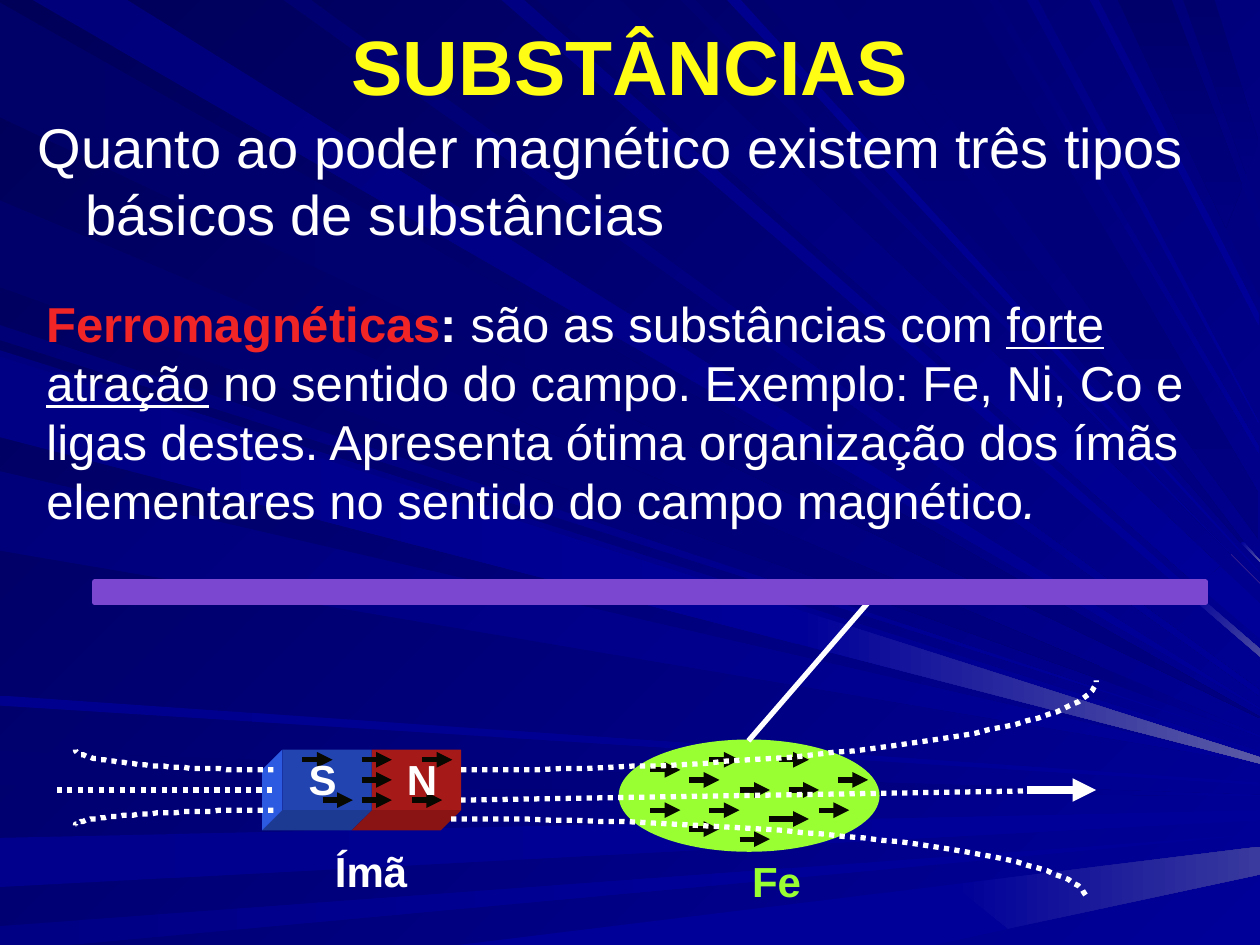
from math import cos, pi, sin

from lxml import etree
from pptx import Presentation
from pptx import util as u
from pptx.dml.color import RGBColor
from pptx.enum import dml, shapes, text
from pptx.oxml.ns import qn

WHITE = RGBColor(0xFF, 0xFF, 0xFF)
YELLOW = RGBColor(0xFF, 0xFD, 0x13)
RED = RGBColor(0xF1, 0x25, 0x25)
LIME = RGBColor(0x99, 0xFF, 0x33)
PURPLE = RGBColor(0x7B, 0x46, 0xD0)
BLACK = RGBColor(0x07, 0x08, 0x00)
BLUE_FACE = RGBColor(0x22, 0x44, 0xB0)
BLUE_SIDE = RGBColor(0x2C, 0x5A, 0xE0)
BLUE_BASE = RGBColor(0x1D, 0x3A, 0x92)
RED_FACE = RGBColor(0xA6, 0x19, 0x19)
RED_BASE = RGBColor(0x8A, 0x14, 0x14)
NIGHT = RGBColor(0x00, 0x00, 0x58)
NAVY = RGBColor(0x00, 0x00, 0x99)
UNIT = u.Cm(0.0254)  # the slide is 1000 by 750 units

# Light rays: first colour, last colour, angle, corners
RAYS = [
    ("000069", "000080", 0, "556,317 0,2 0,93 529,345 1000,570 1000,569"),
    ("00007B", "000099", 45, "577,298 101,0 26,0 563,310 1000,563 1000,562"),
    ("000071", "000080", 0, "0,623 701,629 701,621 0,596"),
    ("000080", "000099", 0, "1000,632 1000,631 701,621 701,629"),
    ("00008C", "000099", 0, "0,704 831,660 831,647 0,665"),
    ("000099", "000099", 0, "1000,651 1000,643 831,647 831,660"),
    ("000099", "000099", 0, "1000,662 628,689 628,697"),
    ("000085", "000099", 0, "0,750 54,750 628,697 628,689 0,735"),
    ("000099", "000099", 0, "742,750 801,737 756,702 364,750"),
    ("000099", "39399E", 0, "1000,694 1000,672 756,702 800,737"),
    ("000099", "000099", 0, "1000,589 873,547 873,548"),
    ("000076", "000099", 45, "0,270 873,548 873,547 0,258"),
    ("000080", "000099", 0, "1000,585 1000,584 873,529 873,539"),
    ("00006B", "000080", 0, "0,228 873,539 873,529 0,159"),
    ("000083", "000099", 45, "398,0 944,473 947,469 416,0"),
    ("000099", "4A4AA1", 45, "1000,521 1000,515 947,469 944,473"),
    ("000099", "000099", 0, "1000,507 1000,479 968,449 951,465"),
    ("00006D", "000099", 45, "426,0 951,465 968,449 492,0"),
    ("FF9999", "FF9999", 0, "1000,463 977,440 977,440"),
    ("000073", "000099", 45, "540,0 977,440 977,440 552,0"),
    ("000073", "000080", 90, "606,0 985,431 987,430 661,0"),
    ("000099", "5A5AA6", 45, "1000,446 1000,445 987,430 985,431"),
    ("000080", "000080", 0, "1000,237 1000,183 986,148 973,181"),
    ("00006B", "000080", 90, "887,0 973,181 986,148 930,0"),
    ("00006D", "000080", 90, "964,0 939,0 989,138 999,113"),
    ("000080", "000080", 0, "989,138 1000,167 1000,114 999,113"),
    ("00007E", "000099", 45, "0,342 999,602 999,596 0,278"),
    ("00007B", "000099", 45, "0,437 999,606 999,605 0,374"),
    ("00008E", "000099", 0, "0,560 999,623 999,621 0,552"),
    ("000070", "000099", 45, "225,0 999,552 999,547 247,0"),
    ("00008E", "000099", 45, "577,0 999,454 999,453 588,0"),
    ("000073", "000080", 90, "770,0 686,0 999,428 999,390 998,390"),
    ("000078", "000099", 45, "785,0 999,360 999,354 792,0"),
    ("000085", "000099", 45, "815,0 999,336 999,335 824,0"),
    ("00008A", "000099", 45, "999,249 872,0 865,0 999,258"),
    ("000085", "000099", 0, "0,283 0,347 633,511 635,498 637,485"),
    ("000099", "5A5AA6", 0, "1000,601 637,485 635,498 633,511 1000,606"),
]

prs = Presentation()
prs.slide_width, prs.slide_height = u.Cm(25.4), u.Cm(19.05)
slide = prs.slides.add_slide(prs.slide_layouts[5])
art = slide.shapes


def poly(points, close=True):
    """Draw a plain outline through points given in units."""
    pen = art.build_freeform(*points[0], scale=UNIT)
    pen.add_line_segments(points[1:], close=close)
    shape = pen.convert_to_shape()
    shape.shadow.inherit = False
    shape.line.fill.background()
    return shape


def line(ends, color, width, arrow=False):
    wire = art.add_connector(shapes.MSO_CONNECTOR.STRAIGHT, *[int(n * UNIT) for n in ends])
    wire.line.color.rgb, wire.line.width = color, u.Pt(width)
    if arrow:
        tip = etree.SubElement(wire.line._get_or_add_ln(), qn("a:tailEnd"))
        tip.set("type", "triangle")
    etree.SubElement(wire._element.spPr, qn("a:effectLst"))
    return wire


# Background
back = slide.background.fill
back.gradient()
back.gradient_angle = 315
for stop, color in zip(back.gradient_stops, (NIGHT, NAVY)):
    stop.color.rgb = color
for first, last, angle, corners in RAYS:
    ray = poly([tuple(map(int, pair.split(","))) for pair in corners.split()])
    if first == last:
        ray.fill.solid()
        ray.fill.fore_color.rgb = RGBColor.from_string(first)
        continue
    ray.fill.gradient()
    ray.fill.gradient_angle = -angle % 360
    for stop, color in zip(ray.fill.gradient_stops, (first, last)):
        stop.color.rgb = RGBColor.from_string(color)

# Title, in front of the rays
title = art.title
art._spTree.append(title._element)
title.left, title.top, title.width, title.height = [n * UNIT for n in (50, 5, 900, 93)]
title.text_frame.text = "SUBSTÂNCIAS"
title.text_frame.auto_size = text.MSO_AUTO_SIZE.NONE
title.text_frame.vertical_anchor = text.MSO_ANCHOR.MIDDLE
head = title.text_frame.paragraphs[0]
head.alignment = text.PP_ALIGN.CENTER
head.font.name, head.font.size, head.font.bold = "Arial", u.Pt(44), True
head.font.color.rgb = YELLOW

# Hanging iron and its support
for kind, box, color, width in [
    (shapes.MSO_SHAPE.OVAL, (492, 588, 205, 87), LIME, 1.5),
    (shapes.MSO_SHAPE.RECTANGLE, (75, 462, 882, 16), PURPLE, 3),
]:
    body = art.add_shape(kind, *[n * UNIT for n in box])
    body.shadow.inherit = False
    body.fill.solid()
    body.fill.fore_color.rgb = body.line.color.rgb = color
    body.line.width = u.Pt(width)
    if color == LIME:
        line((594, 588, 697, 469), WHITE, 3)

# Magnet: two front faces with slanted sides
for left, face, base in [(295, RED_FACE, RED_BASE), (224, BLUE_FACE, BLUE_BASE)]:
    front = art.add_shape(shapes.MSO_SHAPE.RECTANGLE, *[n * UNIT for n in (left, 595, 71, 48)])
    front.shadow.inherit = False
    front.line.fill.background()
    under = poly([(left, 643), (left + 71, 643), (left + 55, 659), (left - 16, 659)])
    for part, color in [(front, face), (under, base)]:
        part.fill.solid()
        part.fill.fore_color.rgb = color
side = poly([(224, 595), (224, 643), (208, 659), (208, 611)])
side.fill.solid()
side.fill.fore_color.rgb = BLUE_SIDE

# Elementary magnets in the iron, then in the magnet
for x, y in [
    (563, 603), (587, 627), (618, 603), (626, 627), (650, 643), (665, 619), (547, 619),
    (563, 643), (547, 658), (516, 611), (516, 643), (587, 666),
    (240, 603), (256, 635), (287, 603), (327, 635), (335, 603), (287, 635), (287, 619),
]:
    line((x, y, x + 24, y), BLACK, 3, arrow=True)
line((610, 650, 642, 650), BLACK, 3, arrow=True)

# Field lines: quarter ellipses and straight ones
field = []
for x, y, w, h in [
    (366, 611, 504, -71), (358, 650, 504, 63), (217, 611, -157, -16), (217, 643, -157, 12),
]:
    turns = [pi / 2 * n / 40 for n in range(41)]
    curve = poly([(x + w * sin(t), y + h * (1 - cos(t))) for t in turns], close=False)
    curve.fill.background()
    field.append(curve)
field += [line(ends, WHITE, 3) for ends in [(216, 627, 43, 627), (862, 627, 366, 635)]]
for curve in field:
    curve.line.color.rgb, curve.line.width = WHITE, u.Pt(3)
    curve.line.dash_style = dml.MSO_LINE.ROUND_DOT
line((815, 627, 870, 627), WHITE, 4.5, arrow=True)

# Texts: box, size, bold, colour, anchor, wrap, runs
MID, TOP = text.MSO_ANCHOR.MIDDLE, text.MSO_ANCHOR.TOP
intro = "Quanto ao poder magnético existem três tipos básicos de substâncias"
facts = [
    "Ferromagnéticas", ":", " são as substâncias com ", "forte atração",
    " no sentido do campo. Exemplo: Fe, Ni, Co e ligas destes. Apresenta ótima organização"
    " dos ímãs elementares no sentido do campo magnético", ".",
]
paras = []
for box, size, bold, color, anchor, wrap, words in [
    ((20, 84, 980, 106), 32, False, WHITE, TOP, True, [intro]),
    ((27, 228, 973, 197), 28, False, WHITE, MID, True, facts),
    ((587, 674, 68, 50), 24, True, LIME, MID, False, ["Fe"]),
    ((256, 666, 87, 50), 24, True, WHITE, MID, False, ["Ímã"]),
    ((235, 593, 131, 50), 24, True, WHITE, MID, True, ["S\tN"]),
]:
    frame = art.add_textbox(*[n * UNIT for n in box]).text_frame
    frame.word_wrap, frame.vertical_anchor = wrap, anchor
    para = frame.paragraphs[0]
    for word in words:
        para.add_run().text = word
    if "\t" in words[0]:
        tabs = etree.SubElement(para._p.get_or_add_pPr(), qn("a:tabLst"))
        etree.SubElement(tabs, qn("a:tab"), pos=str(78 * UNIT), algn="l")
    para.font.name, para.font.size, para.font.bold = "Arial", u.Pt(size), bold
    para.font.color.rgb = color
    paras.append(para)

hang = paras[0]._p.get_or_add_pPr()
hang.set("marL", str(38 * UNIT))
hang.set("indent", str(-38 * UNIT))
name, colon, _, strong, _, dot = paras[1].runs
name.font.color.rgb = RED
name.font.bold = colon.font.bold = True
strong.font.underline = True
dot.font.italic = True

prs.save("out.pptx")
